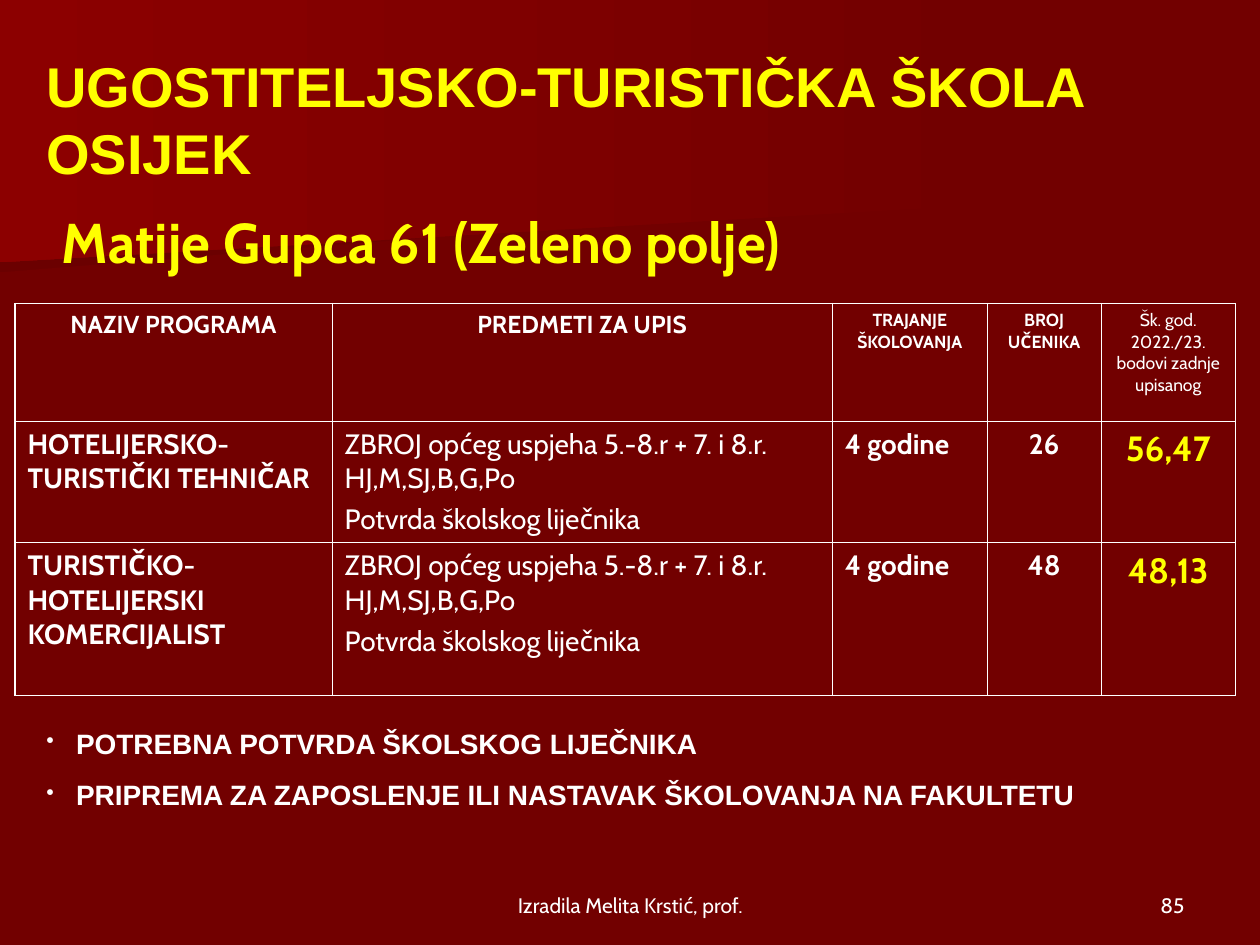
from dataclasses import dataclass

from lxml.etree import SubElement
from pptx import Presentation
from pptx.dml.color import RGBColor
from pptx.enum.text import MSO_ANCHOR as Anchor, PP_ALIGN as Align
from pptx.oxml.ns import qn
from pptx.util import Pt


@dataclass(frozen=True)
class Theme:
    """Colours, fonts and type sizes of the slide."""
    background: str = "720000"
    glow: str = "8C0000"
    shade: str = "6B0000"
    text: str = "FFFFFF"
    accent: str = "FFFF00"
    heading_font: str = "Arial"
    body_font: str = "Cabin"
    title: int = 32
    title_end: int = 44
    score: int = 20
    body: int = 16
    header: int = 14
    footer: int = 12
    small_header: int = 10
    outer_line: float = 1.08
    inner_line: float = 0.45


THEME = Theme()
HEADERS = [
    ("NAZIV PROGRAMA", THEME.header, True),
    ("PREDMETI ZA UPIS", THEME.header, True),
    ("TRAJANJE ŠKOLOVANJA", THEME.small_header, True),
    ("BROJ UČENIKA", THEME.small_header, True),
    ("Šk. god. 2022./23. bodovi zadnje upisanog", THEME.small_header, False),
]
SUBJECTS = ["ZBROJ općeg uspjeha 5.-8.r + 7. i 8.r. HJ,M,SJ,B,G,Po", "Potvrda školskog liječnika"]
PROGRAMMES = [
    ("HOTELIJERSKO-TURISTIČKI TEHNIČAR", "26", "56,47"),
    ("TURISTIČKO-HOTELIJERSKI KOMERCIJALIST", "48", "48,13"),
]
NOTES = [
    "POTREBNA POTVRDA ŠKOLSKOG LIJEČNIKA",
    "PRIPREMA ZA ZAPOSLENJE ILI NASTAVAK ŠKOLOVANJA NA FAKULTETU",
]


def rgb(value):
    """Turn a hex string into a colour."""
    return RGBColor.from_string(value)


def add_run(paragraph, text, size, color=THEME.text, font=THEME.body_font, bold=False):
    """Append one formatted run."""
    run = paragraph.add_run()
    run.text = text
    run.font.size = Pt(size)
    run.font.name = font
    run.font.bold = bold
    run.font.color.rgb = rgb(color)


def add_text_frame(slide, box, anchor=Anchor.TOP):
    """Add a wrapping text box and return its text frame."""
    frame = slide.shapes.add_textbox(*map(Pt, box)).text_frame
    frame.word_wrap = True
    frame.vertical_anchor = anchor
    return frame


def add_band(slide, box, right_height, color):
    """Add a gradient band whose lower edge rises to the right."""
    left, top, width, height = box
    builder = slide.shapes.build_freeform(Pt(left), Pt(top))
    corners = [(left + width, top), (left + width, top + right_height), (left, top + height)]
    builder.add_line_segments([(Pt(x), Pt(y)) for x, y in corners], close=True)
    band = builder.convert_to_shape()
    band.shadow.inherit = False
    band.line.fill.background()
    band.fill.gradient()
    band.fill.gradient_angle = 180
    for stop, stop_color in zip(band.fill.gradient_stops, (THEME.background, color)):
        stop.color.rgb = rgb(stop_color)


def add_title(slide, box):
    """Add the school name with its address."""
    paragraph = add_text_frame(slide, box, Anchor.MIDDLE).paragraphs[0]
    add_run(paragraph, "UGOSTITELJSKO-TURISTIČKA ŠKOLA OSIJEK", THEME.title,
            THEME.accent, THEME.heading_font, True)
    paragraph.add_line_break()
    add_run(paragraph, " ", THEME.title, THEME.accent, THEME.heading_font, True)
    add_run(paragraph, "Matije Gupca 61 (Zeleno polje)", THEME.title, THEME.accent, bold=True)
    add_run(paragraph, " ", THEME.title_end, THEME.accent)


def set_borders(cell, edges):
    """Draw the cell borders; edges tells which sides are on the outline."""
    properties = cell._tc.get_or_add_tcPr()
    for position, (side, outer) in enumerate(edges.items()):
        width = THEME.outer_line if outer else THEME.inner_line
        line = properties.makeelement(qn(f"a:{side}"), {"w": str(Pt(width))})
        color = SubElement(SubElement(line, qn("a:solidFill")), qn("a:srgbClr"))
        color.set("val", THEME.text)
        properties.insert(position, line)


def fill_cell(cell, lines, size, align=Align.LEFT, color=THEME.text, bold=True, before=4):
    """Write the lines of a cell, one paragraph each."""
    cell.fill.background()
    for index, line in enumerate(lines):
        frame = cell.text_frame
        paragraph = frame.add_paragraph() if index else frame.paragraphs[0]
        paragraph.alignment = align
        paragraph.line_spacing = 1.01
        paragraph.space_before = Pt(before)
        add_run(paragraph, line, size, color, bold=bold)


def add_programme_table(slide, box, widths, heights):
    """Add the table of programmes."""
    table = slide.shapes.add_table(len(heights), len(widths), *map(Pt, box)).table
    table.first_row = table.horz_banding = False
    for column, width in zip(table.columns, widths):
        column.width = Pt(width)
    for row, height in zip(table.rows, heights):
        row.height = Pt(height)
    for column, (text, size, bold) in enumerate(HEADERS):
        fill_cell(table.cell(0, column), [text], size, Align.CENTER, bold=bold, before=size / 4)
    for row, (name, places, score) in enumerate(PROGRAMMES, 1):
        cells = table.rows[row].cells
        fill_cell(cells[0], [name], THEME.body)
        fill_cell(cells[1], SUBJECTS, THEME.body, bold=False)
        fill_cell(cells[2], ["4 godine"], THEME.body)
        fill_cell(cells[3], [places], THEME.body, Align.CENTER)
        fill_cell(cells[4], [score], THEME.score, Align.CENTER, THEME.accent)
    for row in range(len(heights)):
        for column in range(len(widths)):
            set_borders(table.cell(row, column), {
                "lnL": column == 0, "lnR": column == len(widths) - 1,
                "lnT": row == 0, "lnB": row == len(heights) - 1})


def add_notes_list(slide, box, indent=17):
    """Add the bulleted remarks under the table."""
    frame = add_text_frame(slide, box)
    for index, note in enumerate(NOTES):
        paragraph = frame.add_paragraph() if index else frame.paragraphs[0]
        paragraph.space_before = Pt(10)
        properties = paragraph._p.get_or_add_pPr()
        properties.set("marL", str(Pt(indent)))
        properties.set("indent", str(-Pt(indent)))
        SubElement(SubElement(properties, qn("a:buClr")), qn("a:srgbClr")).set("val", THEME.text)
        SubElement(properties, qn("a:buSzPct")).set("val", "80000")
        SubElement(properties, qn("a:buChar")).set("char", "•")
        add_run(paragraph, note, THEME.body, font=THEME.heading_font, bold=True)


def add_footer(slide, box, text, align):
    """Add one footer entry."""
    paragraph = add_text_frame(slide, box, Anchor.BOTTOM).paragraphs[0]
    paragraph.alignment = align
    add_run(paragraph, text, THEME.footer)


def main():
    """Build and save the slide."""
    presentation = Presentation()
    presentation.slide_width, presentation.slide_height = Pt(720), Pt(540)
    slide = presentation.slides.add_slide(presentation.slide_layouts[6])
    slide.background.fill.solid()
    slide.background.fill.fore_color.rgb = rgb(THEME.background)
    add_band(slide, (0, 72.7, 560.9, 82.8), 37.5, THEME.shade)
    add_band(slide, (0, 0, 570.2, 149.8), 116.6, THEME.glow)
    add_footer(slide, (516.2, 491.8, 167.8, 36), "85", Align.RIGHT)
    add_title(slide, (19.4, 49, 674.6, 90.7))
    add_programme_table(slide, (8.6, 173.5, 697.4, 223.5),
                        (181.2, 285.8, 88.6, 65, 76.8), (67.2, 68.9, 87.4))
    add_notes_list(slide, (19.4, 411.8, 686.2, 55.4))
    add_footer(slide, (246.2, 491.8, 228.2, 36), "Izradila Melita Krstić, prof.", Align.CENTER)
    presentation.save("out.pptx")


if __name__ == "__main__":
    main()
